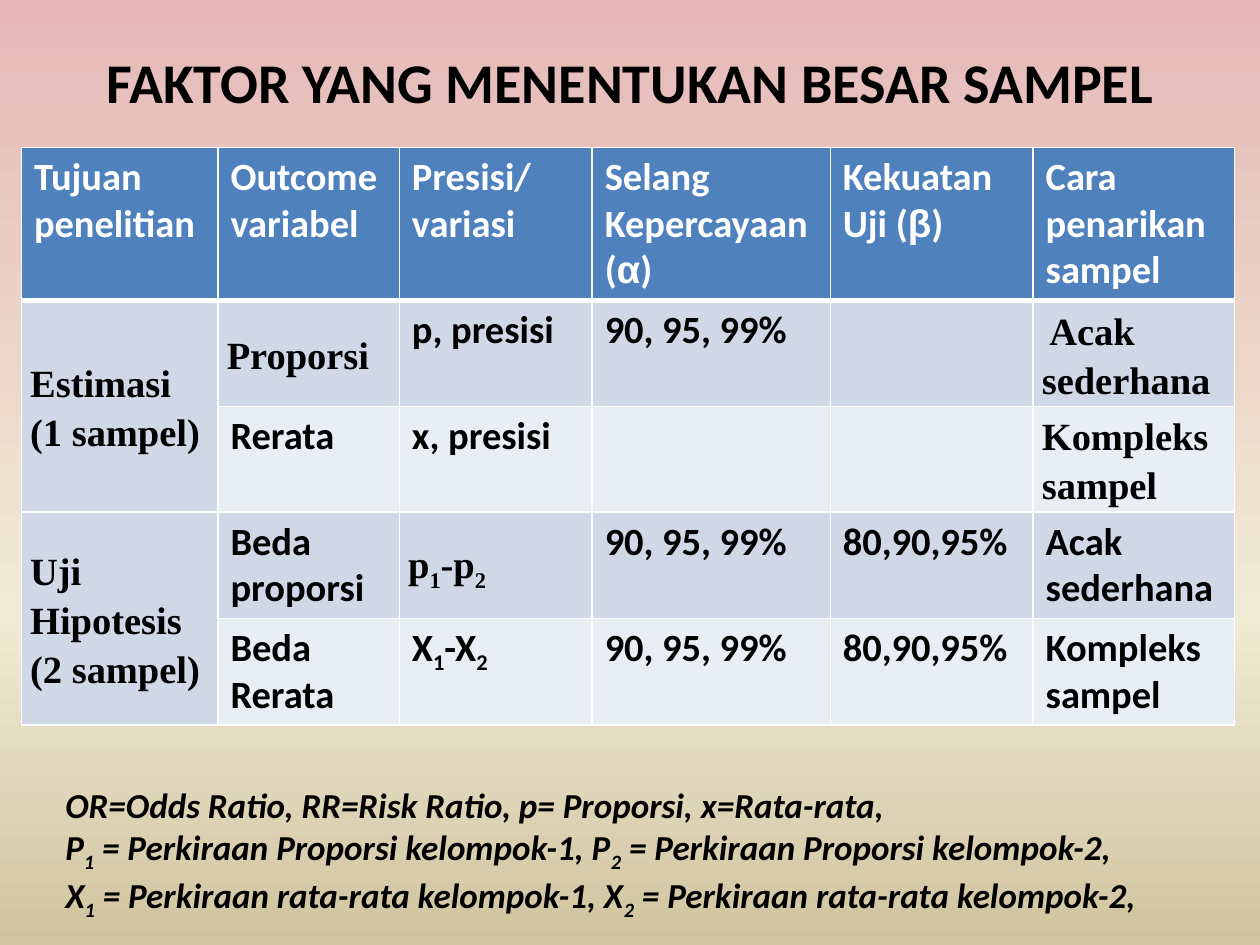
from dataclasses import dataclass
from lxml.etree import SubElement
from pptx import Presentation
from pptx.dml.color import RGBColor
from pptx.enum.text import MSO_ANCHOR, PP_ALIGN
from pptx.oxml.ns import qn
from pptx.util import Inches, Pt


@dataclass(frozen=True)
class Theme:
    body_font: str = "Calibri"
    serif_font: str = "Times New Roman"
    greek_font: str = "Arial"
    title_size: int = 32
    table_size: int = 22
    note_size: int = 20
    text: str = "000000"
    white: str = "FFFFFF"
    header: str = "4F81BD"
    bands: tuple = ("D0D8E8", "E9EDF4")
    background: tuple = ((0, "E6B9B8"), (65, "F0EBD5"), (100, "D1C39F"))


THEME = Theme()

# Content: "_" puts the next character in subscript, "\n" starts a paragraph
TITLE = "FAKTOR YANG MENENTUKAN BESAR SAMPEL"
ROWS = [
    ["Tujuan penelitian", "Outcome variabel", "Presisi/ variasi",
     "Selang Kepercayaan (α)", "Kekuatan Uji (β)", "Cara penarikan sampel"],
    ["Estimasi\n(1 sampel)", "Proporsi", "p, presisi", "90, 95, 99%", "", " Acak sederhana"],
    ["", "Rerata", "x, presisi", "", "", "Kompleks sampel"],
    ["Uji Hipotesis\n(2 sampel)", "Beda proporsi", "p_1-p_2", "90, 95, 99%",
     "80,90,95%", "Acak sederhana"],
    ["", "Beda Rerata", "X_1-X_2", "90, 95, 99%", "80,90,95%", "Kompleks sampel"],
]
SERIF_CELLS = {(1, 0), (1, 1), (1, 5), (2, 5), (3, 0), (3, 2)}
MERGED_ROWS = [(1, 2), (3, 4)]
COLUMN_WIDTHS = [1.56, 1.44, 1.53, 1.89, 1.61, 1.6]
ROW_HEIGHTS = [1.19] + [0.84] * 4
NOTES = (
    "OR=Odds Ratio, RR=Risk Ratio, p= Proporsi, x=Rata-rata,\n"
    "P_1 = Perkiraan Proporsi kelompok-1, P_2 = Perkiraan Proporsi kelompok-2,\n"
    "X_1 = Perkiraan rata-rata kelompok-1, X_2 = Perkiraan rata-rata kelompok-2,"
)


def split_runs(line):
    """Yield (text, kind) for plain, subscript and Greek stretches."""
    plain, subscript = "", False
    for char in line:
        if char == "_":
            subscript = True
        elif subscript or char in "αβ":
            if plain:
                yield plain, "plain"
            yield char, "subscript" if subscript else "greek"
            plain, subscript = "", False
        else:
            plain += char
    if plain:
        yield plain, "plain"


def style_font(font, name, size, color, italic=False):
    font.name, font.size = name, Pt(size)
    font.bold, font.italic = True, italic
    font.color.rgb = RGBColor.from_string(color)


def write_text(frame, content, name, size, color, italic=False, spacing=None):
    for index, line in enumerate(content.split("\n")):
        paragraph = frame.add_paragraph() if index else frame.paragraphs[0]
        if spacing:
            paragraph.line_spacing = spacing
        style_font(paragraph.font, name, size, color, italic)
        stretches = list(split_runs(line))
        for text, kind in stretches:
            run = paragraph.add_run()
            run.text = text
            if len(stretches) > 1:
                run_name = THEME.greek_font if kind == "greek" else name
                style_font(run.font, run_name, size, color, italic)
            if kind == "subscript":
                run._r.get_or_add_rPr().set("baseline", "-25000")


def add_borders(cell, widths):
    properties = cell._tc.get_or_add_tcPr()
    for side, width in widths.items():
        line = SubElement(properties, qn(f"a:ln{side}"), w=str(Pt(width)))
        fill = SubElement(line, qn("a:solidFill"))
        SubElement(fill, qn("a:srgbClr"), val=THEME.white)


def set_background(slide):
    fill = slide.background.fill
    fill.gradient()
    fill.gradient_angle = 270
    stops = slide._element.find(".//" + qn("a:gsLst"))
    for stop in list(stops):
        stops.remove(stop)
    for position, color in THEME.background:
        stop = SubElement(stops, qn("a:gs"), pos=str(position * 1000))
        SubElement(stop, qn("a:srgbClr"), val=color)


def add_title(slide):
    title = slide.shapes.title
    title.left, title.top = Inches(0.17), Inches(0.33)
    title.width, title.height = Inches(9.67), Inches(0.64)
    frame = title.text_frame
    frame.vertical_anchor = MSO_ANCHOR.TOP
    write_text(frame, TITLE, THEME.body_font, THEME.title_size, THEME.text)
    frame.paragraphs[0].alignment = PP_ALIGN.CENTER


def add_factor_table(slide):
    table = slide.shapes.add_table(
        len(ROWS), len(COLUMN_WIDTHS), Inches(0.17), Inches(1.17),
        Inches(sum(COLUMN_WIDTHS)), Inches(sum(ROW_HEIGHTS))).table
    for column, width in zip(table.columns, COLUMN_WIDTHS):
        column.width = Inches(width)
    for row, height in zip(table.rows, ROW_HEIGHTS):
        row.height = Inches(height)
    for first, last in MERGED_ROWS:
        table.cell(first, 0).merge(table.cell(last, 0))

    for r, row in enumerate(ROWS):
        for c, content in enumerate(row):
            cell = table.cell(r, c)
            add_borders(cell, {"L": 1, "R": 1, "T": 3 if r == 1 else 1,
                               "B": 3 if r == 0 else 1})
            cell.fill.solid()
            band = THEME.bands[(r - 1) % 2] if r else THEME.header
            cell.fill.fore_color.rgb = RGBColor.from_string(band)
            serif = (r, c) in SERIF_CELLS
            if serif:
                cell.vertical_anchor = MSO_ANCHOR.MIDDLE
                cell.margin_left = cell.margin_right = Inches(0.07)
                cell.margin_top = cell.margin_bottom = 0
            write_text(cell.text_frame, content,
                       THEME.serif_font if serif else THEME.body_font,
                       THEME.table_size, THEME.text if r else THEME.white,
                       spacing=1.15 if serif else None)


def add_notes(slide):
    box = slide.shapes.add_textbox(Inches(0.42), Inches(6.17), Inches(9.17), Inches(1.11))
    box.text_frame.word_wrap = True
    write_text(box.text_frame, NOTES, THEME.body_font, THEME.note_size,
               THEME.text, italic=True)


def main():
    presentation = Presentation()
    presentation.slide_width, presentation.slide_height = Inches(10), Inches(7.5)
    slide = presentation.slides.add_slide(presentation.slide_layouts[5])
    set_background(slide)
    add_title(slide)
    add_factor_table(slide)
    add_notes(slide)
    presentation.save("out.pptx")


if __name__ == "__main__":
    main()
